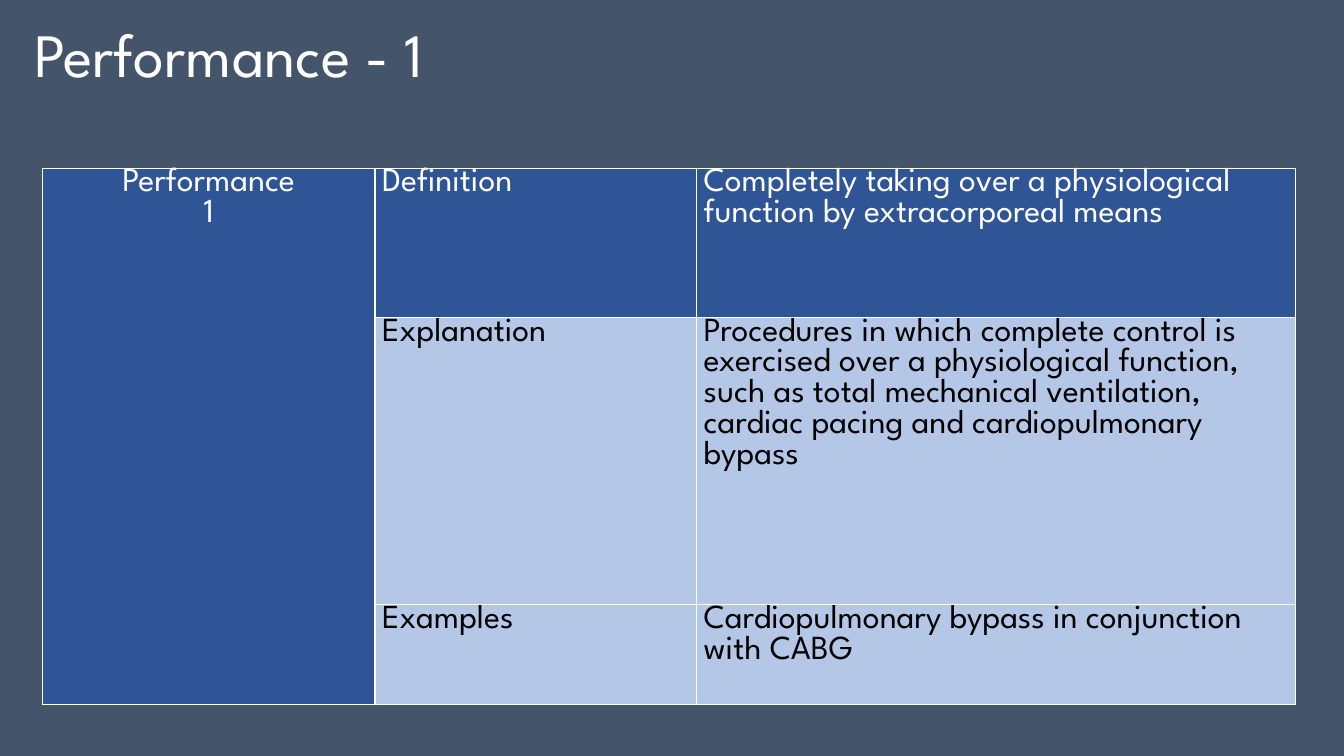
from lxml.etree import SubElement
from pptx import Presentation
from pptx.dml.color import RGBColor
from pptx.enum.text import MSO_ANCHOR, PP_ALIGN
from pptx.oxml.ns import qn
from pptx.util import Inches, Pt

WHITE, BLACK = "FFFFFF", "000000"
SLATE, NAVY, PALE = "44546A", "2F5597", "B4C7E7"

COLUMN_WIDTHS = [3.3, 3.19, 5.94]
ROW_HEIGHTS = [1.48, 2.85, 0.99]
ROWS = [
    ("Performance\n1", "Definition",
     "Completely taking over a physiological function by extracorporeal means"),
    ("", "Explanation",
     "Procedures in which complete control is exercised over a physiological function, "
     "such as total mechanical ventilation, cardiac pacing and cardiopulmonary bypass"),
    ("", "Examples", "Cardiopulmonary bypass in conjunction with CABG"),
]


def color(value):
    return RGBColor.from_string(value)


class SlideBuilder:
    font_name = "League Spartan"

    def __init__(self, page, background):
        self.page = page
        page.background.fill.solid()
        page.background.fill.fore_color.rgb = color(background)

    def style_text(self, frame, size, text_color, align=PP_ALIGN.LEFT):
        for para in frame.paragraphs:
            para.alignment = align
            for span in para.runs:
                span.font.name = self.font_name
                span.font.size = Pt(size)
                span.font.color.rgb = color(text_color)

    def title(self, text, left, top, width, height):
        box = self.page.shapes.add_textbox(
            Inches(left), Inches(top), Inches(width), Inches(height))
        frame = box.text_frame
        frame.word_wrap = True
        frame.vertical_anchor = MSO_ANCHOR.MIDDLE
        frame.text = text
        frame.paragraphs[0].line_spacing = 0.9
        self.style_text(frame, 44, WHITE)

    def borders(self, cell):
        """Draw thin white lines on all four sides, ahead of the cell's fill."""
        properties = cell._tc.get_or_add_tcPr()
        for position, side in enumerate(("lnL", "lnR", "lnT", "lnB")):
            line = SubElement(properties, qn(f"a:{side}"), w=str(Pt(1)))
            fill = SubElement(line, qn("a:solidFill"))
            SubElement(fill, qn("a:srgbClr"), val=WHITE)
            properties.insert(position, line)

    def cell(self, cell, text, fill, text_color, align):
        cell.margin_left = cell.margin_right = Inches(0.07)
        cell.margin_top = cell.margin_bottom = 0
        cell.fill.solid()
        cell.fill.fore_color.rgb = color(fill)
        self.borders(cell)
        cell.text_frame.text = text
        self.style_text(cell.text_frame, 24, text_color, align)

    def table(self, rows, left, top):
        """Add a table with a dark first row and a dark, merged first column."""
        table = self.page.shapes.add_table(
            len(rows), len(COLUMN_WIDTHS), Inches(left), Inches(top),
            Inches(sum(COLUMN_WIDTHS)), Inches(sum(ROW_HEIGHTS))).table
        for column, width in zip(table.columns, COLUMN_WIDTHS):
            column.width = Inches(width)
        for row, height in zip(table.rows, ROW_HEIGHTS):
            row.height = Inches(height)
        for row_index, texts in enumerate(rows):
            for column_index, text in enumerate(texts):
                dark = row_index == 0 or column_index == 0
                self.cell(table.cell(row_index, column_index), text,
                          NAVY if dark else PALE, WHITE if dark else BLACK,
                          PP_ALIGN.LEFT if column_index else PP_ALIGN.CENTER)
        table.cell(0, 0).merge(table.cell(len(rows) - 1, 0))


def main():
    deck = Presentation()
    deck.slide_width, deck.slide_height = Inches(13.33), Inches(7.5)
    builder = SlideBuilder(deck.slides.add_slide(deck.slide_layouts[6]), SLATE)
    builder.title("Performance - 1", 0.24, 0.12, 9.72, 0.91)
    builder.table(ROWS, 0.42, 1.67)
    deck.save("out.pptx")


if __name__ == "__main__":
    main()
